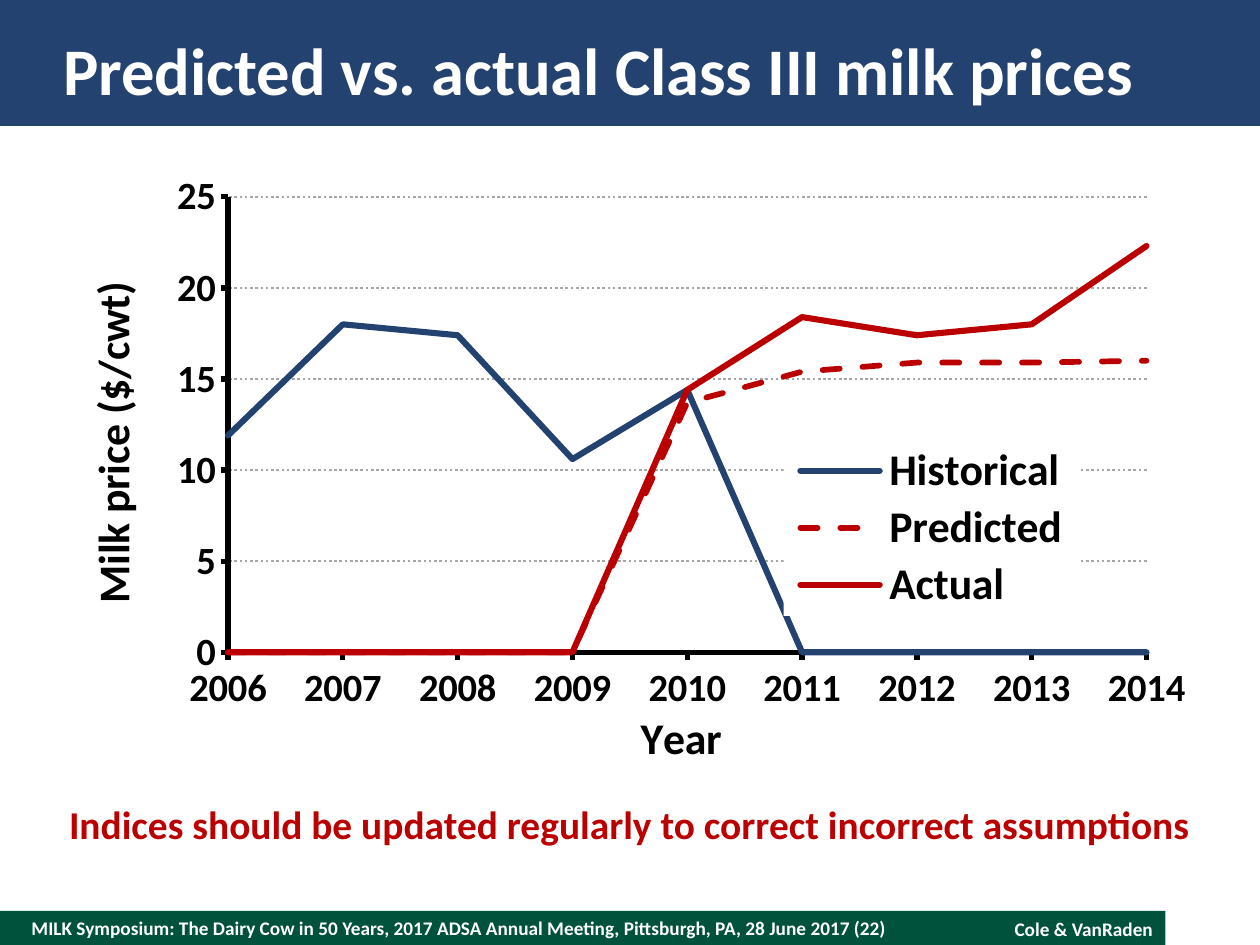
"""Build the slide comparing predicted and actual milk prices."""
from dataclasses import dataclass
from typing import Any, Optional

from lxml import etree
from pptx import Presentation
from pptx.chart.data import CategoryChartData
from pptx.dml.color import RGBColor
from pptx.enum.chart import XL_CHART_TYPE, XL_LEGEND_POSITION, XL_MARKER_STYLE, XL_TICK_MARK
from pptx.enum.dml import MSO_LINE
from pptx.enum.shapes import MSO_SHAPE
from pptx.enum.text import MSO_ANCHOR, PP_ALIGN
from pptx.oxml import parse_xml
from pptx.oxml.ns import qn
from pptx.util import Inches, Pt

RECT = MSO_SHAPE.RECTANGLE
LEFT, MID, RIGHT = PP_ALIGN.LEFT, PP_ALIGN.CENTER, PP_ALIGN.RIGHT
TOP, HALF = MSO_ANCHOR.TOP, MSO_ANCHOR.MIDDLE
LINE, SIDE = XL_CHART_TYPE.LINE, XL_LEGEND_POSITION.RIGHT
BARE, OUT = XL_MARKER_STYLE.NONE, XL_TICK_MARK.OUTSIDE
SOLID, DASH, DOTS = MSO_LINE.SOLID, MSO_LINE.DASH, MSO_LINE.ROUND_DOT
WIDE, HIGH = Inches(10), Inches(7.5)
NS = ('xmlns:c="http://schemas.openxmlformats.org/drawingml/2006/chart" '
      'xmlns:a="http://schemas.openxmlformats.org/drawingml/2006/main"')


@dataclass(frozen=True)
class Theme:
    """Colours, type sizes and font of the slide."""
    navy: str = "244270"
    green: str = "00523C"
    red: str = "BA0000"
    white: str = "FFFFFF"
    black: str = "000000"
    grey: str = "A6A6A6"
    face: str = "Calibri"
    head: float = 38
    label: float = 25
    tick: float = 22
    claim: float = 22.5
    foot: float = 11


@dataclass(frozen=True)
class Box:
    """A place given as shares of the slide's width and height."""
    x: float
    y: float
    w: float
    h: float

    def spots(self) -> tuple:
        """Return left, top, width and height as lengths."""
        return (int(self.x * WIDE), int(self.y * HIGH),
                int(self.w * WIDE), int(self.h * HIGH))


@dataclass(frozen=True)
class Note:
    """A line of text with its place and look."""
    text: str
    box: Box
    size: float
    hue: str
    align: Any = LEFT
    anchor: Any = HALF
    pad: float = 0


@dataclass(frozen=True)
class Trend:
    """One line of the chart."""
    name: str
    vals: tuple[Optional[float], ...]
    hue: str
    width: float = 3.5
    dash: Any = SOLID


T = Theme()
FOOT = 7.23 / 7.5
BANDS = ((Box(0, FOOT, 0.925, 1 - FOOT), T.green), (Box(0, 0, 1, 1 / 7.5), T.navy))
HEAD = Note("Predicted vs. actual Class III milk prices",
            Box(0.05, 0.2 / 7.5, 0.9, 0.7 / 7.5), T.head, T.white)
NOTES = (
    Note("MILK Symposium: The Dairy Cow in 50 Years, 2017 ADSA Annual Meeting, "
         "Pittsburgh, PA, 28 June 2017 (22)",
         Box(0.025, FOOT, 0.7, 1 - FOOT), T.foot, T.white),
    Note("Cole & VanRaden", Box(0.725, FOOT, 0.2, 0.29 / 7.5), T.foot, T.white,
         RIGHT, TOP, 0.1),
    Note("Indices should be updated regularly to correct incorrect assumptions",
         Box(0.05, 6.35 / 7.5, 0.9, 0.38 / 7.5), T.claim, T.red, MID, TOP),
)
PLOT = Box(0.055, 1.37 / 7.5, 0.9, 4.82 / 7.5)
YEARS = [str(year) for year in range(2006, 2015)]
GAP = (None,) * 4
TRENDS = (
    Trend("Historical", (11.9, 18, 17.4, 10.6, 14.4) + GAP[1:], T.navy),
    Trend("Predicted", GAP + (13.7, 15.4, 15.9, 15.9, 16), T.red, 3.25, DASH),
    Trend("Actual", GAP + (14.4, 18.4, 17.4, 18, 22.3), T.red),
)


def put(item: Any, **looks: Any) -> None:
    """Set each given attribute on the item."""
    for key, val in looks.items():
        setattr(item, key, val)


def ink(font: Any, size: float, hue: str) -> None:
    """Give a font the bold house style."""
    put(font, name=T.face, size=Pt(size), bold=True)
    font.color.rgb = RGBColor.from_string(hue)


def rule(line: Any, hue: str, width: float, dash: Any = SOLID) -> None:
    """Style a line."""
    line.color.rgb = RGBColor.from_string(hue)
    put(line, width=Pt(width), dash_style=dash)


def band(slide: Any, box: Box, hue: str) -> None:
    """Draw a plain colour band."""
    shape = slide.shapes.add_shape(RECT, *box.spots())
    shape.shadow.inherit = False
    shape.fill.solid()
    shape.fill.fore_color.rgb = RGBColor.from_string(hue)
    shape.line.fill.background()


def write(shape: Any, note: Note) -> None:
    """Place a text shape and fill it with the note."""
    spots = dict(zip(("left", "top", "width", "height"), note.box.spots()))
    put(shape, **spots)
    frame = shape.text_frame
    side, edge = Inches(note.pad), Inches(note.pad / 2)
    put(frame, text=note.text, word_wrap=True, vertical_anchor=note.anchor,
        margin_left=side, margin_right=side, margin_top=edge, margin_bottom=edge)
    para = frame.paragraphs[0]
    para.alignment = note.align
    ink(para.runs[0].font, note.size, note.hue)


def layout(box: Box, inner: bool = False) -> Any:
    """Return a manual chart layout."""
    kind = '<c:layoutTarget val="inner"/>' if inner else ""
    modes = "".join(f'<c:{key}Mode val="edge"/>' for key in "xy")
    sizes = "".join(f'<c:{key} val="{getattr(box, key)}"/>' for key in "xywh")
    return parse_xml(f"<c:layout {NS}><c:manualLayout>{kind}{modes}{sizes}"
                     "</c:manualLayout></c:layout>")


def paper() -> Any:
    """Return a white fill for a chart part."""
    return parse_xml(f'<c:spPr {NS}><a:solidFill><a:srgbClr val="{T.white}"/>'
                     "</a:solidFill></c:spPr>")


def drop(node: Any, tag: str) -> None:
    """Remove the children with the given tag."""
    for child in node.findall(qn(tag)):
        node.remove(child)


def axis(part: Any, name: str) -> None:
    """Style an axis and name it."""
    put(part, has_title=True, major_tick_mark=OUT)
    frame = part.axis_title.text_frame
    frame.text = name
    ink(frame.paragraphs[0].runs[0].font, T.label, T.black)
    ink(part.tick_labels.font, T.tick, T.black)
    rule(part.format.line, T.black, 3)


def graph(slide: Any) -> None:
    """Draw the price chart."""
    data = CategoryChartData()
    data.categories = YEARS
    for trend in TRENDS:
        data.add_series(trend.name, trend.vals)
    chart = slide.shapes.add_chart(LINE, *PLOT.spots(), data).chart
    put(chart, has_title=False, has_legend=True)
    put(chart.font, name=T.face, size=Pt(10))
    plot = chart.plots[0]
    plot.vary_by_categories = False
    for series, trend in zip(plot.series, TRENDS):
        series.smooth = False
        series.marker.style = BARE
        rule(series.format.line, trend.hue, trend.width, trend.dash)
        series._element.find(f"{qn('c:spPr')}/{qn('a:ln')}").set("cap", "rnd")
    axis(chart.category_axis, "Year")
    price = chart.value_axis
    axis(price, "Milk price ($/cwt)")
    put(price, minimum_scale=0, maximum_scale=25, major_unit=5, has_major_gridlines=True)
    put(price.tick_labels, number_format="0", number_format_is_linked=False)
    rule(price.major_gridlines.format.line, T.grey, 1.5, DOTS)
    node = price._element
    drop(node, "c:crossBetween")
    cross = etree.Element(qn("c:crossBetween"), val="midCat")
    node.find(qn("c:crosses")).addnext(cross)
    legend = chart.legend
    put(legend, position=SIDE, include_in_layout=False)
    ink(legend.font, T.label, T.black)
    key = legend._element
    drop(key, "c:layout")
    key.find(qn("c:legendPos")).addnext(layout(Box(0.63, 0.44, 0.26, 0.29)))
    key.find(qn("c:overlay")).addnext(paper())
    root = chart._chartSpace.chart
    area = root.plotArea
    drop(area, "c:layout")
    area.insert(0, layout(Box(0.14, 0.04, 0.81, 0.75), True))
    area.append(paper())
    drop(root, "c:dispBlanksAs")
    root.find(qn("c:plotVisOnly")).addnext(etree.Element(qn("c:dispBlanksAs"), val="zero"))


def main() -> None:
    """Build and save the slide."""
    deck = Presentation()
    put(deck, slide_width=WIDE, slide_height=HIGH)
    slide = deck.slides.add_slide(deck.slide_layouts[5])
    for box, hue in BANDS:
        band(slide, box, hue)
    title = slide.shapes.title
    slide.shapes._spTree.append(title._element)
    write(title, HEAD)
    graph(slide)
    for note in NOTES:
        write(slide.shapes.add_textbox(*note.box.spots()), note)
    deck.save("out.pptx")


if __name__ == "__main__":
    main()
